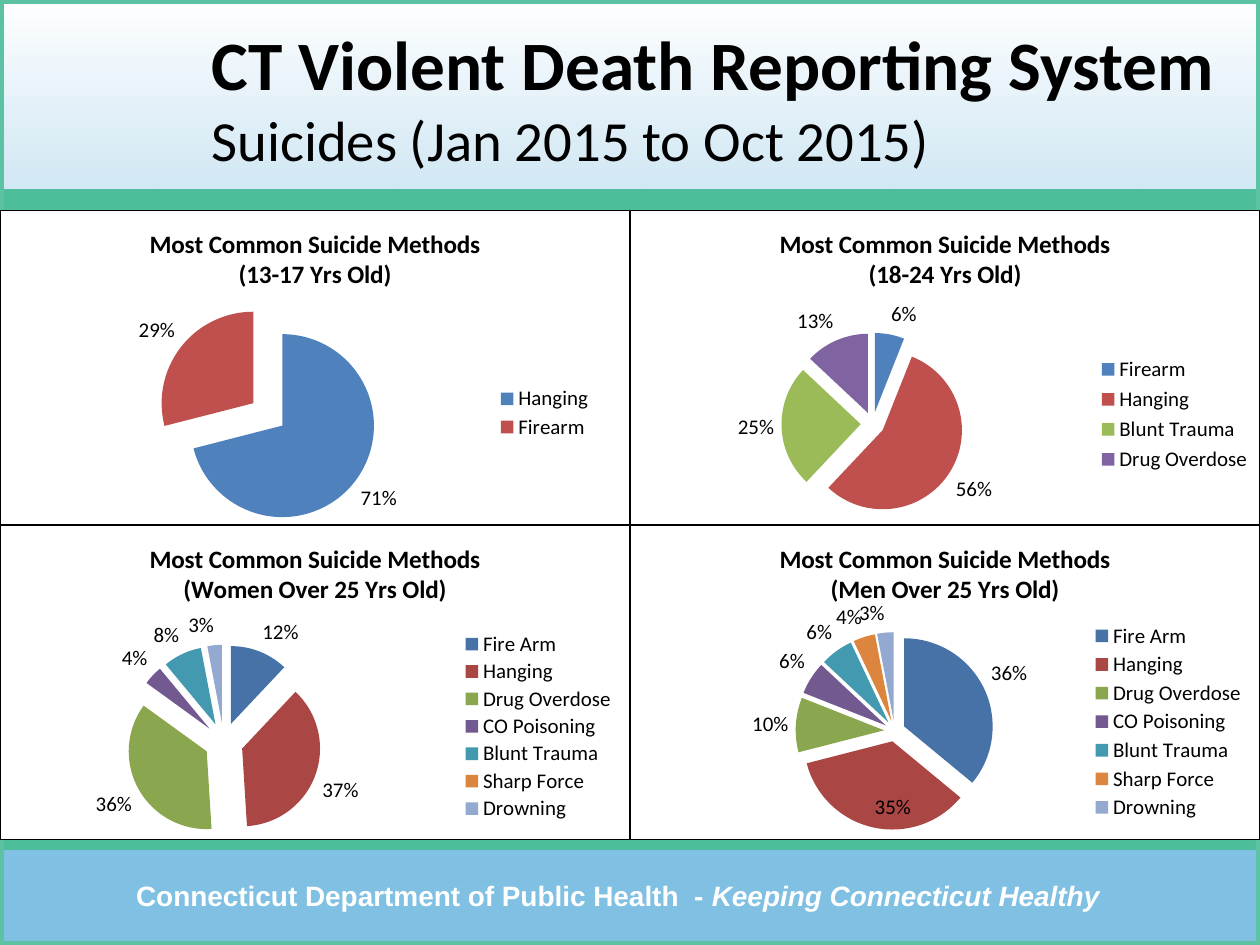
import pptx
import pptx.chart.data
import pptx.dml.color
import pptx.enum.chart
import pptx.enum.shapes
import pptx.enum.text
import pptx.oxml
import pptx.oxml.ns
import pptx.util

PX = 914400 // 126
PAGE_W, PAGE_H = 1260, 945
CHART_W, CHART_H = 630, 315
CHARTS_TOP = 210

COLORS = {
    "sky": "0082C8", "green": "4DBD9C", "frame": "5BC2A4",
    "white": "FFFFFF", "black": "000000",
}
BRIGHT = ["4F81BD", "C0504D", "9BBB59", "8064A2"]
MUTED = ["4672A8", "AA4744", "8AA64F", "725990", "4299B0", "DC853E", "93A9D0"]

TITLE = [("CT Violent Death Reporting System", 39.6, True),
         ("Suicides (Jan 2015 to Oct 2015)", 32.4, False)]
FOOTER = [("Connecticut Department of Public Health  - ", False),
          ("Keeping Connecticut Healthy", True)]
CHART_TITLE = "Most Common Suicide Methods"
ADULT_METHODS = ["Fire Arm", "Hanging", "Drug Overdose", "CO Poisoning",
                 "Blunt Trauma", "Sharp Force", "Drowning"]

# plot: fractions of the chart; legend: px within the chart; inside: slice labelled inside
CHARTS = [
    {"group": "(Men Over 25 Yrs Old)", "cell": (1, 1), "methods": ADULT_METHODS,
     "values": [36, 35, 10, 6, 6, 4, 3], "colors": MUTED, "explode": 12,
     "plot": (0.25, 0.34, 0.34, 0.63), "legend": (462, 95, 160, 204), "inside": 1},
    {"group": "(Women Over 25 Yrs Old)", "cell": (0, 1), "methods": ADULT_METHODS,
     "values": [12, 37, 36, 4, 8, None, 3], "colors": MUTED, "explode": 25,
     "plot": (0.2, 0.38, 0.31, 0.62), "legend": (460, 104, 160, 194), "inside": None},
    {"group": "(13-17 Yrs Old)", "cell": (0, 0), "methods": ["Hanging", "Firearm"],
     "values": [71, 29], "colors": BRIGHT, "explode": 20,
     "plot": (0.25, 0.3, 0.35, 0.7), "legend": (494, 174, 105, 59), "inside": None},
    {"group": "(18-24 Yrs Old)", "cell": (1, 0),
     "methods": ["Firearm", "Hanging", "Blunt Trauma", "Drug Overdose"],
     "values": [6, 56, 25, 13], "colors": BRIGHT, "explode": 15,
     "plot": (0.24, 0.38, 0.29, 0.6), "legend": (465, 142, 160, 126), "inside": None},
]


def px(*lengths):
    return [pptx.util.Emu(length * PX) for length in lengths]


def rgb(name):
    return pptx.dml.color.RGBColor.from_string(COLORS.get(name, name))


def xml(markup):
    """Parse one element, adding the chart and drawing namespaces to its tag."""
    tag, rest = markup.split(">", 1) if "/>" not in markup.split(">")[0] + ">" \
        else (markup[:-2], None)
    spaces = " " + pptx.oxml.ns.nsdecls("c", "a")
    return pptx.oxml.parse_xml(tag + spaces + ("/>" if rest is None else ">" + rest))


def add_rect(page, left, top, width, height, fill=None):
    rect = page.shapes.add_shape(pptx.enum.shapes.MSO_SHAPE.RECTANGLE,
                                 *px(left, top, width, height))
    rect.shadow.inherit = False
    rect.line.fill.background()
    if fill:
        rect.fill.solid()
        rect.fill.fore_color.rgb = rgb(fill)
    else:
        rect.fill.background()
    return rect


def add_backdrop(page):
    sky = add_rect(page, 0, 0, PAGE_W, PAGE_H)
    sky.fill.gradient()
    sky.fill.gradient_angle = 90
    bottom, top = sky.fill.gradient_stops
    bottom.color.rgb, top.color.rgb = rgb("sky"), rgb("white")
    bottom.position, top.position = 0, 1
    shade = sky._element.spPr.find(".//" + pptx.oxml.ns.qn("a:srgbClr"))
    shade.append(xml('<a:alpha val="50000"/>'))

    add_rect(page, 0, 840, PAGE_W, 10, "green")
    add_footer(page)
    add_rect(page, 0, 189, PAGE_W, 21, "green")
    frame = add_rect(page, 0, 0, PAGE_W, PAGE_H)
    frame.line.color.rgb = rgb("frame")
    frame.line.width = pptx.util.Pt(4.5)


def add_text_box(page, left, top, width, height, font, color):
    box = page.shapes.add_textbox(*px(left, top, width, height))
    box.text_frame.word_wrap = True
    para = box.text_frame.paragraphs[0]
    para.font.name = font
    para.font.color.rgb = rgb(color)
    return box, para


def add_footer(page):
    box, para = add_text_box(page, 62, 872, 1112, 47, "Arial", "white")
    para.alignment = pptx.enum.text.PP_ALIGN.CENTER
    para.font.size = pptx.util.Pt(16)
    para.font.bold = True
    for text, italic in FOOTER:
        span = para.add_run()
        span.text = text
        span.font.italic = italic


def add_title(page):
    box, para = add_text_box(page, 199, 5, 1050, 184, "Calibri", "black")
    box.text_frame.vertical_anchor = pptx.enum.text.MSO_ANCHOR.MIDDLE
    for index, (text, size, bold) in enumerate(TITLE):
        if index:
            para.add_line_break()
        span = para.add_run()
        span.text = text
        span.font.size = pptx.util.Pt(size)
        span.font.bold = bold


def manual_layout(box, inner=False):
    target = '<c:layoutTarget val="inner"/>' if inner else ""
    modes = '<c:xMode val="edge"/><c:yMode val="edge"/>'
    sizes = "".join(f'<c:{key} val="{value:.2f}"/>' for key, value in zip("xywh", box))
    return xml(f"<c:layout><c:manualLayout>{target}{modes}{sizes}"
               "</c:manualLayout></c:layout>")


def drop_layout(parent):
    for layout in parent.findall(pptx.oxml.ns.qn("c:layout")):
        parent.remove(layout)


def add_pie(page, info):
    column, row = info["cell"]
    data = pptx.chart.data.CategoryChartData()
    data.categories = info["methods"]
    data.add_series("Series 1", info["values"])
    chart = page.shapes.add_chart(
        pptx.enum.chart.XL_CHART_TYPE.PIE,
        *px(column * CHART_W, CHARTS_TOP + row * CHART_H, CHART_W, CHART_H), data).chart
    chart.font.name = "Calibri"
    chart.font.size = pptx.util.Pt(12)
    chart.font.color.rgb = rgb("black")

    chart.has_title = True
    title = chart.chart_title
    title.include_in_layout = False
    title.text_frame.text = CHART_TITLE + "\n" + info["group"]
    for para in title.text_frame.paragraphs:
        para.font.name = "Calibri"
        para.font.size = pptx.util.Pt(14.4)
        para.font.bold = True
        para.font.color.rgb = rgb("black")

    chart.has_legend = True
    legend = chart.legend
    legend.position = pptx.enum.chart.XL_LEGEND_POSITION.RIGHT
    legend.include_in_layout = False
    drop_layout(legend._element)
    sizes = (CHART_W, CHART_H) * 2
    legend_box = [length / size for length, size in zip(info["legend"], sizes)]
    legend._element.find(pptx.oxml.ns.qn("c:legendPos")).addnext(manual_layout(legend_box))

    space = chart._chartSpace
    plot_area = space.chart.plotArea
    drop_layout(plot_area)
    plot_area.insert(0, manual_layout(info["plot"], inner=True))
    space.chart.addnext(xml(
        f'<c:spPr><a:solidFill><a:srgbClr val="{COLORS["white"]}"/></a:solidFill>'
        f'<a:ln w="9525"><a:solidFill><a:srgbClr val="{COLORS["black"]}"/></a:solidFill>'
        "</a:ln></c:spPr>"))
    style_slices(chart.plots[0], info)


def style_slices(plot, info):
    plot.vary_by_categories = True
    series = plot.series[0]
    series._element.find(pptx.oxml.ns.qn("c:tx")).addnext(
        xml(f'<c:explosion val="{info["explode"]}"/>'))
    for index, color in enumerate(info["colors"][:len(info["values"])]):
        fill = series.points[index].format.fill
        fill.solid()
        fill.fore_color.rgb = rgb(color)

    positions = pptx.enum.chart.XL_LABEL_POSITION
    labels = series.data_labels
    labels.show_value = False
    labels.show_percentage = True
    labels.number_format = "0%"
    labels.number_format_is_linked = False
    labels.position = positions.OUTSIDE_END
    if info["inside"] is not None:
        series.points[info["inside"]].data_label.position = positions.INSIDE_END
        for tag, shown in (("c:showVal", "0"), ("c:showPercent", "1")):
            for flag in series._element.xpath(f".//c:dLbl/{tag}"):
                flag.set("val", shown)


def main():
    deck = pptx.Presentation()
    deck.slide_width, deck.slide_height = pptx.util.Inches(10), pptx.util.Inches(7.5)
    page = deck.slides.add_slide(deck.slide_layouts[6])
    add_backdrop(page)
    add_title(page)
    for info in CHARTS:
        add_pie(page, info)
    deck.save("out.pptx")


if __name__ == "__main__":
    main()
